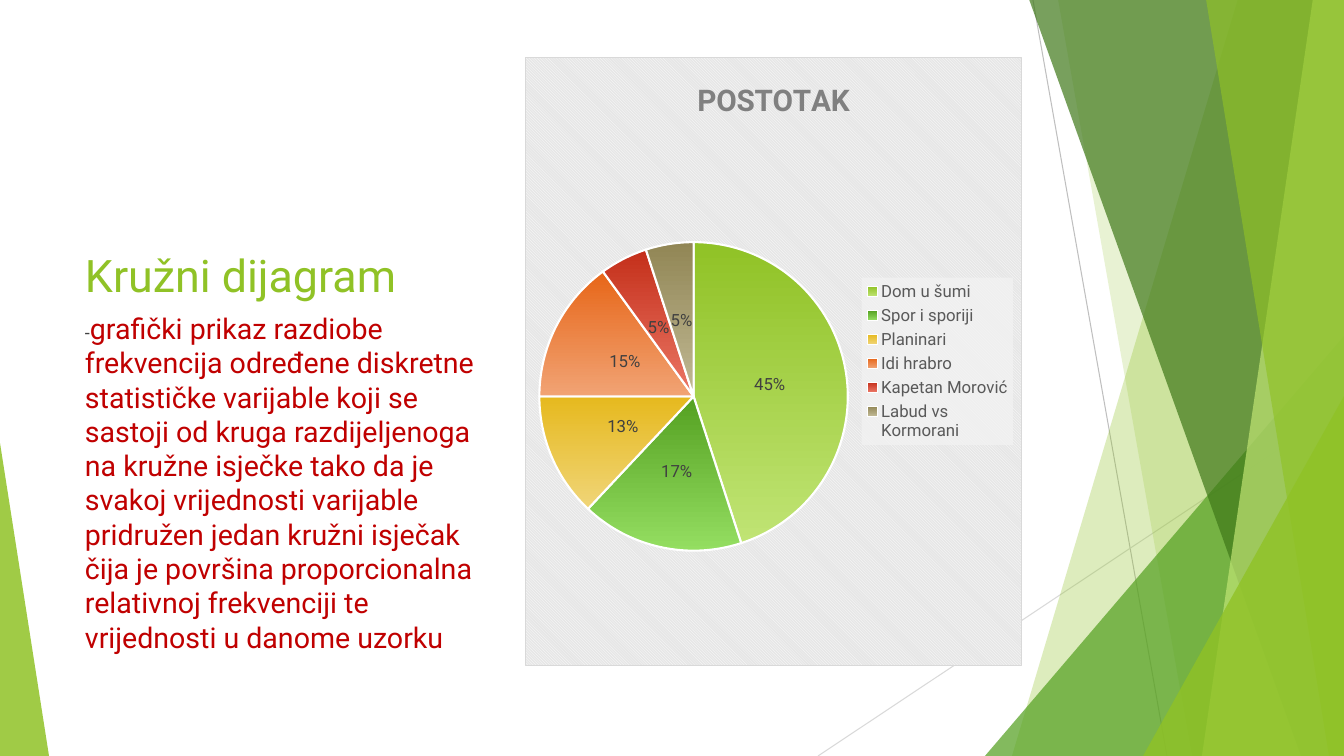
from lxml import etree
from pptx import Presentation, util as u
from pptx.chart.data import CategoryChartData
from pptx.dml.color import RGBColor
from pptx.enum import chart as ch, shapes, text
from pptx.oxml import parse_xml
from pptx.oxml.ns import nsdecls, qn

PX = 914400 / 100.8
FONT = "Roboto"
GREEN = "90C226"
rgb = RGBColor.from_string


def px(*vals):
    return [u.Emu(round(v * PX)) for v in vals]


def style(font, size, color, bold=False):
    font.name, font.size, font.bold = FONT, u.Pt(size), bold
    font.color.rgb = rgb(color)


prs = Presentation()
prs.slide_width, prs.slide_height = px(1344, 756)
slide = prs.slides.add_slide(prs.slide_layouts[6])
items = slide.shapes

# Thin lines behind the facets
for ends, color in [((1033, 0, 1167, 756), "BFBFBF"),
                    ((1344, 406, 818, 756), "D9D9D9")]:
    line = items.add_connector(shapes.MSO_CONNECTOR.STRAIGHT, *px(*ends))
    line.line.color.rgb = rgb(color)
    line.line.width = u.Pt(0.75)
    etree.SubElement(line._element.spPr, qn("a:effectLst"))

# Green facets: (top x, bottom x) runs to the right edge,
# (left, top, width, height, peak) is a right triangle
facets = [
    ((1238, 1012), GREEN, 30),
    ((1058, 1192), GREEN, 20),
    ((985, 336, 359, 420, 1), "54A021", 72),
    ((1029, 1301), "3F7819", 70),
    ((1313, 1202), "C0E474", 70),
    ((1206, 1329), GREEN, 65),
    ((1143, 396, 201, 360, 1), GREEN, 80),
    ((0, 443, 49, 313, 0), GREEN, 85),
]
for geo, color, alpha in facets:
    if len(geo) == 2:
        top, low = geo
        path = items.build_freeform(top, -1, scale=PX)
        path.add_line_segments([(1344, -1), (1344, 756), (low, 756)])
        facet = path.convert_to_shape()
    else:
        facet = items.add_shape(shapes.MSO_SHAPE.ISOSCELES_TRIANGLE, *px(*geo[:4]))
        facet.adjustments[0] = geo[4]
    facet.shadow.inherit = False
    facet.line.fill.background()
    facet.fill.solid()
    facet.fill.fore_color.rgb = rgb(color)
    tone = facet._element.spPr.find(".//" + qn("a:srgbClr"))
    etree.SubElement(tone, qn("a:alpha"), val=str(alpha * 1000))


# Title and body text
def write(runs, box, anchor=text.MSO_ANCHOR.TOP, before=0):
    frame = items.add_textbox(*px(*box)).text_frame
    frame.word_wrap = True
    frame.vertical_anchor = anchor
    para = frame.paragraphs[0]
    para.space_before = u.Pt(before)
    for words, size, color in runs:
        run = para.add_run()
        run.text = words
        style(run.font, size, color)


write([("Kružni dijagram", 32, GREEN)], (75, 165, 425, 141),
      anchor=text.MSO_ANCHOR.BOTTOM)
write([("-", 12.9, "404040"),
       ("grafički prikaz razdiobe frekvencija određene diskretne statističke "
        "varijable koji se sastoji od kruga razdijeljenoga na kružne isječke "
        "tako da je svakoj vrijednosti varijable pridružen jedan kružni isječak "
        "čija je površina proporcionalna relativnoj frekvenciji te vrijednosti "
        "u danome uzorku", 20.4, "C00000")],
      (75, 306, 425, 285), before=10)

# Pie chart
films = [
    ("Dom u šumi", 45, GREEN, "C0E474"),
    ("Spor i sporiji", 17, "54A021", "94DE61"),
    ("Planinari", 13, "E6B91E", "F0D578"),
    ("Idi hrabro", 15, "E76618", "F1A374"),
    ("Kapetan Morović", 5, "C42F1A", "EB7766"),
    ("Labud vs Kormorani", 5, "918655", "C1B995"),
]
data = CategoryChartData()
data.categories = [film[0] for film in films]
data.add_series("POSTOTAK", [film[1] for film in films])
pie = items.add_chart(ch.XL_CHART_TYPE.PIE, *px(525, 57, 497, 609), data).chart
style(pie.font, 10, "000000")
pie.has_title = True
head = pie.chart_title.text_frame
head.text = "POSTOTAK"
style(head.paragraphs[0].runs[0].font, 21.3, "808080", bold=True)

plot = pie.plots[0]
plot.vary_by_categories = True
for i, (_, _, dark, light) in enumerate(films):
    part = plot.series[0].points[i].format
    part.fill.gradient()
    part.fill.gradient_angle = 270
    for stop, color in zip(part.fill.gradient_stops, (dark, light)):
        stop.color.rgb = rgb(color)
        stop.position = float(color == light)
    part.line.color.rgb = rgb("FFFFFF")
    part.line.width = u.Pt(1.5)

plot.has_data_labels = True
tags = plot.data_labels
tags.show_percentage, tags.show_value = True, False
tags.number_format, tags.number_format_is_linked = "0%", False
tags.position = ch.XL_LABEL_POSITION.CENTER
style(tags.font, 12, "404040")

# Legend with a pale, see-through panel
pie.has_legend = True
key = pie.legend
key.position = ch.XL_LEGEND_POSITION.RIGHT
key.include_in_layout = False
style(key.font, 12, "595959")
key._element.find(qn("c:txPr")).addprevious(parse_xml(
    f'<c:spPr {nsdecls("c", "a")}><a:solidFill><a:srgbClr val="F2F2F2">'
    '<a:alpha val="78000"/></a:srgbClr></a:solidFill></c:spPr>'))

# Striped chart background
pie._chartSpace.find(qn("c:txPr")).addprevious(parse_xml(
    f'<c:spPr {nsdecls("c", "a")}><a:pattFill prst="dkDnDiag">'
    '<a:fgClr><a:srgbClr val="FFFFFF"/></a:fgClr>'
    '<a:bgClr><a:srgbClr val="E6E6E6"/></a:bgClr></a:pattFill>'
    '<a:ln w="9525"><a:solidFill><a:srgbClr val="D9D9D9"/></a:solidFill></a:ln>'
    '</c:spPr>'))

prs.save("out.pptx")
